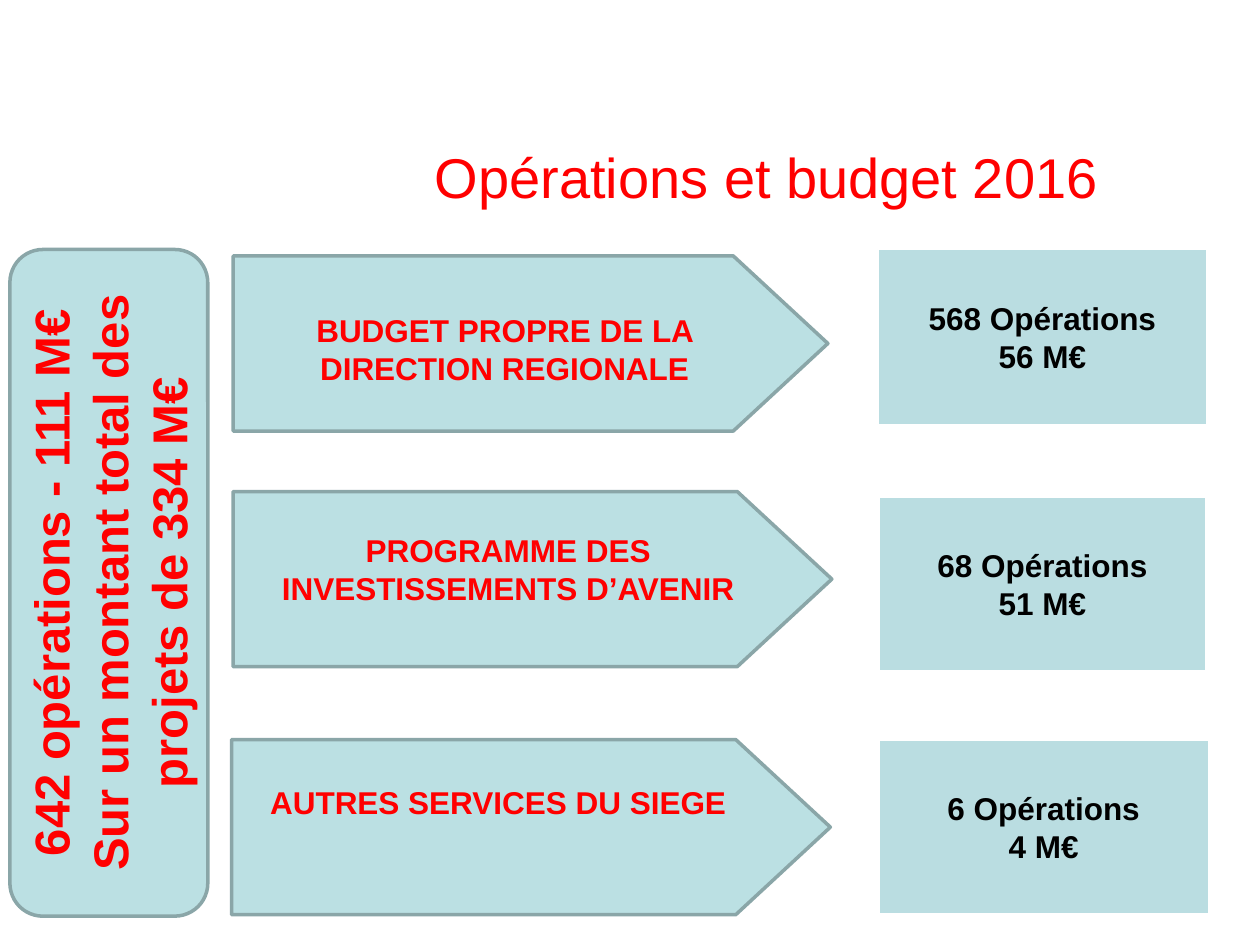
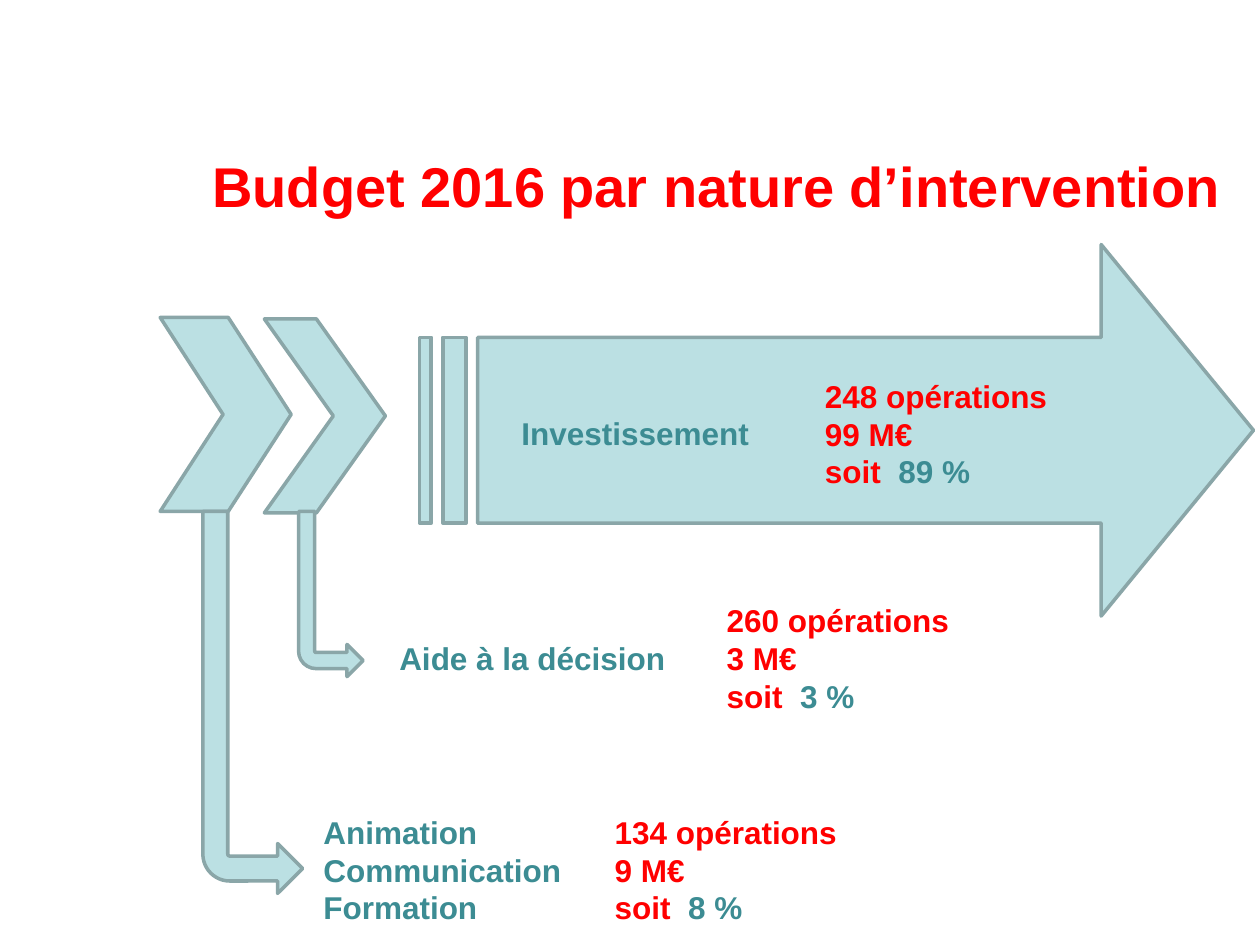
from pptx import Presentation
from pptx.dml.color import RGBColor
from pptx.enum import shapes, text
from pptx.util import Cm, Pt

COLORS = {"red": "FF0000", "teal": "3C8C93", "black": "000000", "white": "FFFFFF",
          "pale": "BBE0E3", "panel": "BADDE1", "edge": "8AA6A8"}
RGB = {name: RGBColor.from_string(value) for name, value in COLORS.items()}
SHAPE = shapes.MSO_SHAPE
LEFT, CENTER = text.PP_ALIGN.LEFT, text.PP_ALIGN.CENTER
MIDDLE, TOP = text.MSO_ANCHOR.MIDDLE, text.MSO_ANCHOR.TOP


def add_box(s, kind, at, adjust=(), fill="pale", line="edge", width=2):
    """Add a flat shape at (left, top, width, height) cm; kind None gives a text box."""
    if kind is None:
        return s.shapes.add_textbox(*map(Cm, at))
    sp = s.shapes.add_shape(kind, *map(Cm, at))
    sp.shadow.inherit = False
    sp.fill.solid()
    sp.fill.fore_color.rgb = RGB[fill]
    sp.line.color.rgb = RGB[line]
    sp.line.width = Pt(width)
    for i, value in enumerate(adjust):
        sp.adjustments[i] = value
    return sp


def write(sp, lines, color, size=18, bold=True, align=CENTER, anchor=TOP):
    tf = sp.text_frame
    tf.word_wrap = True
    tf.auto_size = text.MSO_AUTO_SIZE.NONE
    tf.vertical_anchor = anchor
    for i, line in enumerate(lines):
        p = tf.paragraphs[0] if i == 0 else tf.add_paragraph()
        p.text = line
        p.alignment = align
        p.font.name = "Arial"
        p.font.size = Pt(size)
        p.font.bold = bold
        p.font.color.rgb = RGB[color]
    return tf


prs = Presentation()
prs.slide_width, prs.slide_height = Cm(25.4), Cm(19.05)

titles = [
    ("Opérations et budget 2016", (5.51, 2.77, 19.89, 1.57), False, MIDDLE),
    ("Budget 2016 par nature d’intervention", (3.51, 2.92, 21.89, 1.4), True, TOP),
]
for title, at, bold, anchor in titles:
    s = prs.slides.add_slide(prs.slide_layouts[5])
    sp = s.shapes.title
    sp.left, sp.top, sp.width, sp.height = map(Cm, at)
    write(sp, [title], "red", 32, bold, anchor=anchor)
operations, nature = prs.slides

# Slide 1: total on the left, one arrow and one figure panel per budget
s = operations
total = add_box(s, SHAPE.ROUNDED_RECTANGLE, (0.2, 5.03, 3.99, 13.44))
tf = write(total, ["642 opérations - 111 M€", "Sur un montant total des projets de 334 M€"],
           "red", 28, anchor=MIDDLE)
tf._txBody.bodyPr.set("vert", "vert270")

budgets = [  # arrow left, top, width; label left, top; panel top, width, line
    ((4.7, 5.16, 11.99), (4.65, 6.15), "BUDGET PROPRE DE LA DIRECTION REGIONALE",
     (5.03, 6.63, 1), ["568 Opérations", "56 M€"]),
    ((4.7, 9.91, 12.07), (4.72, 10.58), "PROGRAMME DES INVESTISSEMENTS D’AVENIR",
     (10.01, 6.63, 2), ["68 Opérations", "51 M€"]),
    ((4.67, 14.91, 12.07), (4.52, 15.67), "AUTRES SERVICES DU SIEGE",
     (14.91, 6.68, 2), ["6 Opérations", "4 M€"]),
]
ROW_HEIGHT = 3.53
for arrow, label_at, label, (top, width, line_width), figures in budgets:
    add_box(s, SHAPE.PENTAGON, (*arrow, ROW_HEIGHT), [0.54])
    write(add_box(s, None, (*label_at, 11.05, 1.8)), [label], "red")
    panel = add_box(s, SHAPE.RECTANGLE, (17.7, top, width, ROW_HEIGHT),
                    fill="panel", line="white", width=line_width)
    write(panel, figures, "black", anchor=MIDDLE)

# Slide 2: chevrons branching to the smaller budgets, main arrow for investment
s = nature
bend = [0.25, 0.25, 0.25, 0.27]
add_box(s, SHAPE.CHEVRON, (3.23, 6.4, 2.64, 3.91), [0.48])
add_box(s, SHAPE.CHEVRON, (5.33, 6.43, 2.44, 3.91), [0.57])
for at in [(6.02, 10.31, 1.3, 3.33), (4.09, 10.31, 2.01, 7.7)]:
    sp = add_box(s, SHAPE.BENT_ARROW, at, bend)
    sp.rotation = 180
    sp._element.spPr.xfrm.set("flipH", "1")
add_box(s, SHAPE.STRIPED_RIGHT_ARROW, (8.46, 4.93, 16.81, 7.49), [0.5, 0.41])

interventions = [
    ((10.26, 8.23, 7.85), ["Investissement"],
     (16.38, 7.47, 5.79), ["248 opérations", "99 M€"], "89 %"),
    ((7.8, 12.75, 6.17), ["Aide à la décision"],
     (14.4, 11.99, 5.44), ["260 opérations", "3 M€"], "3 %"),
    ((6.27, 16.26, 5.44), ["Animation", "Communication", "Formation"],
     (12.14, 16.26, 5), ["134 opérations", "9 M€"], "8 %"),
]
for label_at, label, figures_at, figures, share in interventions:
    height = 0.25 + 0.77 * len(label)
    write(add_box(s, None, (*label_at, height)), label, "teal", align=LEFT)
    tf = write(add_box(s, None, (*figures_at, 2.56)), [*figures, "soit "], "red", align=LEFT)
    r = tf.paragraphs[-1].add_run()
    r.text = f" {share}"
    r.font.color.rgb = RGB["teal"]

prs.save("out.pptx")
